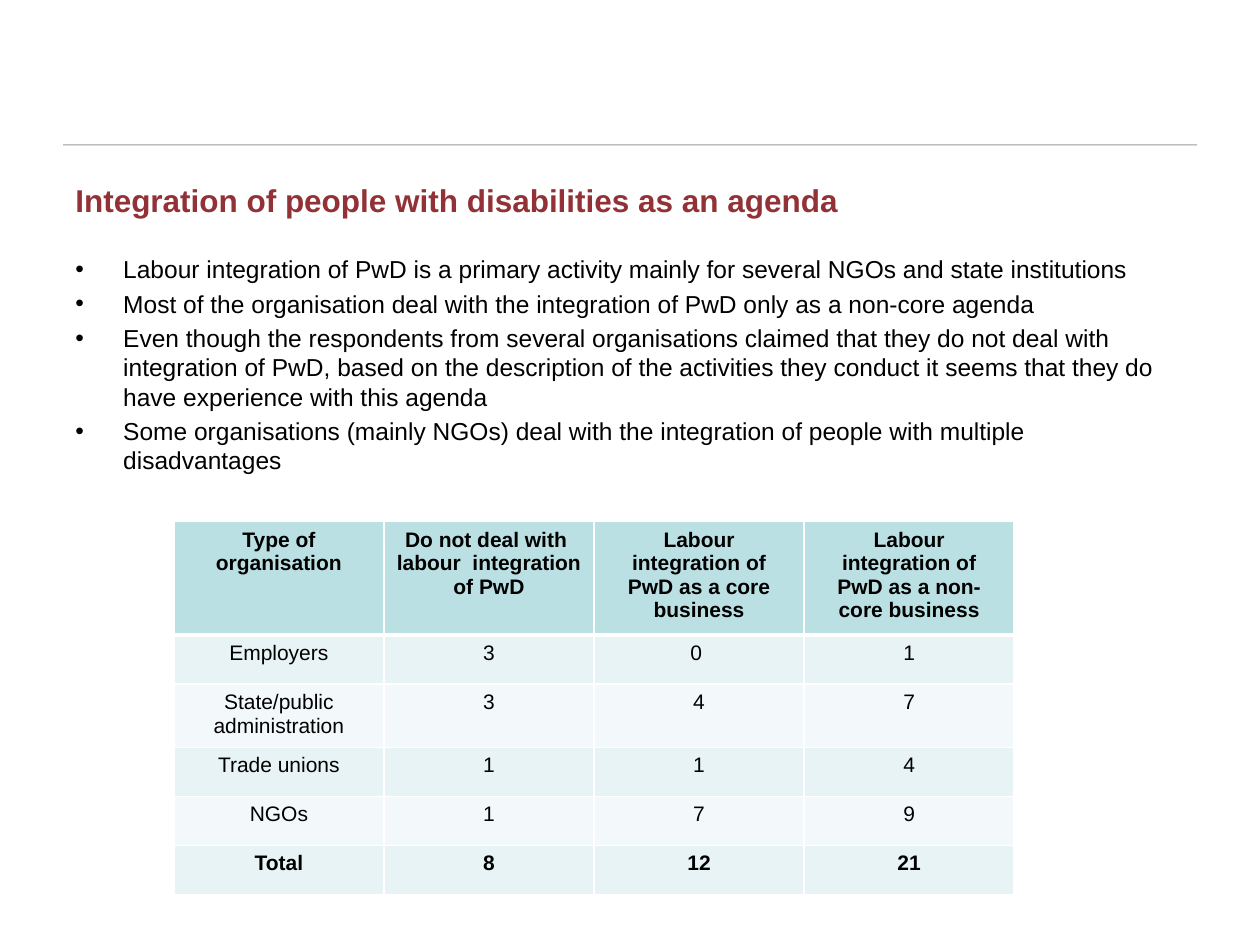
from lxml import etree
from pptx import Presentation
from pptx.dml.color import RGBColor
from pptx.enum.shapes import MSO_CONNECTOR
from pptx.enum.text import PP_ALIGN
from pptx.oxml.ns import qn
from pptx.util import Inches, Pt

STRAIGHT, CENTER = MSO_CONNECTOR.STRAIGHT, PP_ALIGN.CENTER
FONT = "Arial"
COLORS = {"title": "923236", "text": "000000", "border": "FFFFFF",
          "header": "BBE0E3", "odd": "E7F3F4", "even": "F3F9FA"}

TITLE = "Integration of people with disabilities as an agenda"
FINDINGS = [
    "Labour integration of PwD is a primary activity mainly for several NGOs and state institutions",
    "Most of the organisation deal with the integration of PwD only as a non-core agenda",
    "Even though the respondents from several organisations claimed that they do not deal with "
    "integration of PwD, based on the description of the activities they conduct it seems that "
    "they do have experience with this agenda",
    "Some organisations (mainly NGOs) deal with the integration of people with multiple disadvantages",
]
ORGANISATIONS = [
    ("Type of organisation", "Do not deal with  labour  integration of PwD",
     "Labour integration of PwD as a core business",
     "Labour integration of PwD as a non-core business"),
    ("Employers", "3", "0 ", "1"),
    ("State/public administration", "3", "4", "7"),
    ("Trade unions", "1", "1", "4"),
    ("NGOs", "1", "7", "9"),
    ("Total", "8", "12", "21"),
]
ROW_HEIGHTS = [0.86, 0.39, 0.48, 0.39, 0.39, 0.39]
TABLE_LEFT, TABLE_TOP, TABLE_WIDTH = 1.38, 4.14, 6.67
MARGIN, RULE_Y, BODY_TOP, BODY_HEIGHT = 0.5, 1.15, 1.39, 5.31
INDENT = Inches(0.38)


def style(paragraph, size, color, bold=False):
    for run in paragraph.runs:
        run.font.name, run.font.size, run.font.bold = FONT, Pt(size), bold
        run.font.color.rgb = RGBColor.from_string(COLORS[color])


def add_bullet(paragraph):
    props = paragraph._p.get_or_add_pPr()
    props.set("marL", str(INDENT))
    props.set("indent", str(-INDENT))
    etree.SubElement(props, qn("a:buFont")).set("typeface", FONT)
    etree.SubElement(props, qn("a:buChar")).set("char", "•")


def add_borders(cell, widths):
    """Draw the cell's borders; widths maps each side (L, R, T, B) to points."""
    props = cell._tc.get_or_add_tcPr()
    for side, width in widths.items():
        line = etree.SubElement(props, qn(f"a:ln{side}"), w=str(Pt(width)))
        fill = etree.SubElement(line, qn("a:solidFill"))
        etree.SubElement(fill, qn("a:srgbClr")).set("val", COLORS["border"])


def add_rule(slide, width):
    rule = slide.shapes.add_connector(STRAIGHT, Inches(MARGIN), Inches(RULE_Y),
                                      Inches(width - MARGIN), Inches(RULE_Y))
    rule.line.width = Pt(0.5)
    rule.line.color.rgb = RGBColor.from_string(COLORS["text"])
    color = rule._element.spPr.find(".//" + qn("a:srgbClr"))
    etree.SubElement(color, qn("a:alpha")).set("val", "40000")
    etree.SubElement(rule._element.spPr, qn("a:effectLst"))


def add_body(slide, width):
    body = slide.shapes.add_textbox(Inches(MARGIN), Inches(BODY_TOP),
                                    Inches(width - 2 * MARGIN), Inches(BODY_HEIGHT))
    frame = body.text_frame
    frame.word_wrap = True
    frame.text = "\n".join([TITLE, *FINDINGS])
    title, *findings = frame.paragraphs
    style(title, 18, "title", bold=True)
    for index, finding in enumerate(findings):
        finding.space_before = Pt(2.8 if index else 20)
        add_bullet(finding)
        style(finding, 14, "text")


def add_organisations(slide):
    rows, cols = len(ORGANISATIONS), len(ORGANISATIONS[0])
    table = slide.shapes.add_table(rows, cols, Inches(TABLE_LEFT), Inches(TABLE_TOP),
                                   Inches(TABLE_WIDTH), Inches(sum(ROW_HEIGHTS))).table
    for column in table.columns:
        column.width = Inches(TABLE_WIDTH / cols)
    for r, (values, height) in enumerate(zip(ORGANISATIONS, ROW_HEIGHTS)):
        table.rows[r].height = Inches(height)
        fill = "header" if r == 0 else "odd" if r % 2 else "even"
        for c, value in enumerate(values):
            cell = table.cell(r, c)
            add_borders(cell, {"L": 1, "R": 1, "T": 3 if r == 1 else 1, "B": 1 if r else 3})
            cell.fill.solid()
            cell.fill.fore_color.rgb = RGBColor.from_string(COLORS[fill])
            cell.text_frame.text = value
            paragraph = cell.text_frame.paragraphs[0]
            paragraph.alignment = CENTER
            style(paragraph, 12, "text", bold=r in (0, rows - 1))


def main():
    deck = Presentation()
    width = 10
    deck.slide_width, deck.slide_height = Inches(width), Inches(7.5)
    slide = deck.slides.add_slide(deck.slide_layouts[6])
    add_rule(slide, width)
    add_body(slide, width)
    add_organisations(slide)
    deck.save("out.pptx")


if __name__ == "__main__":
    main()
